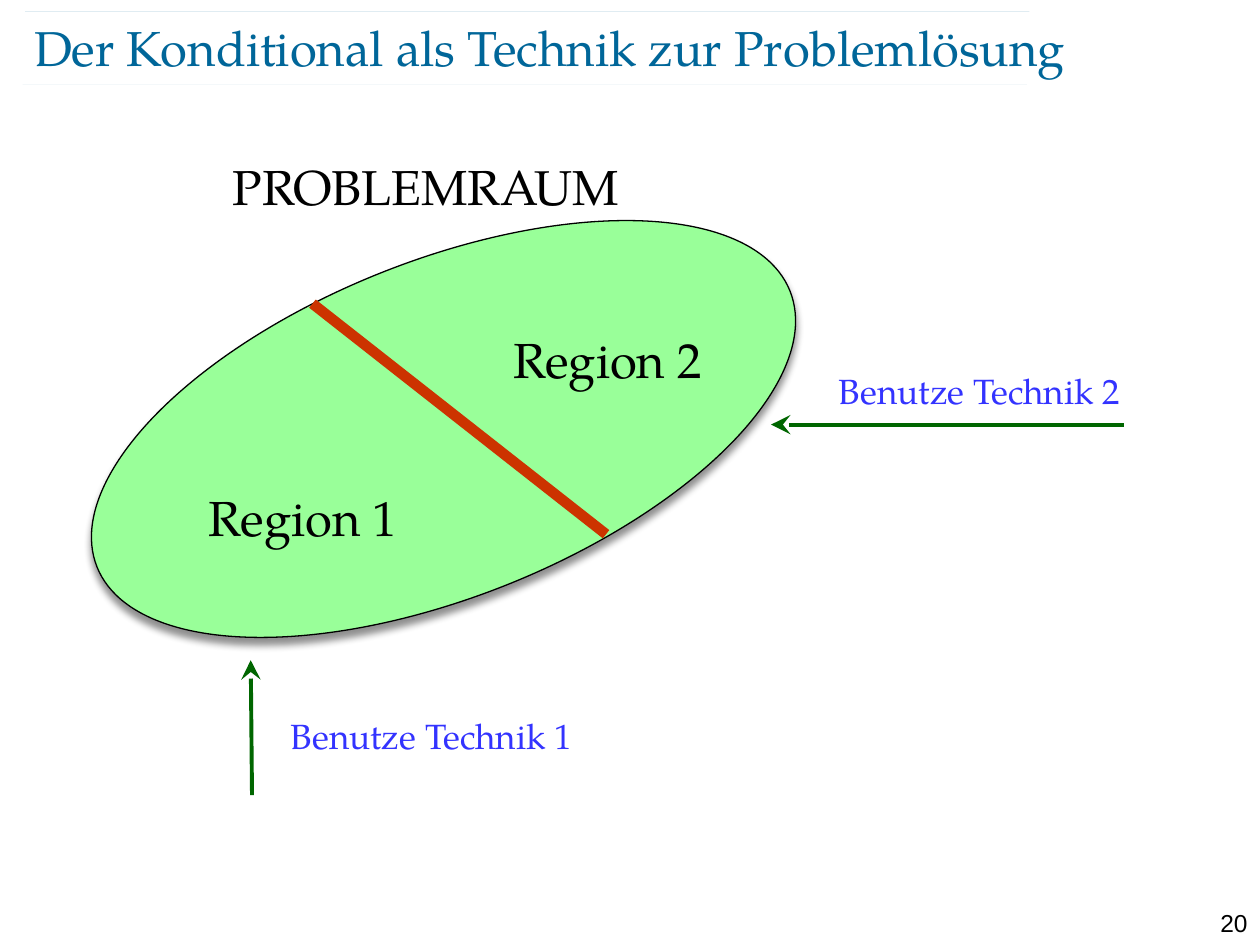
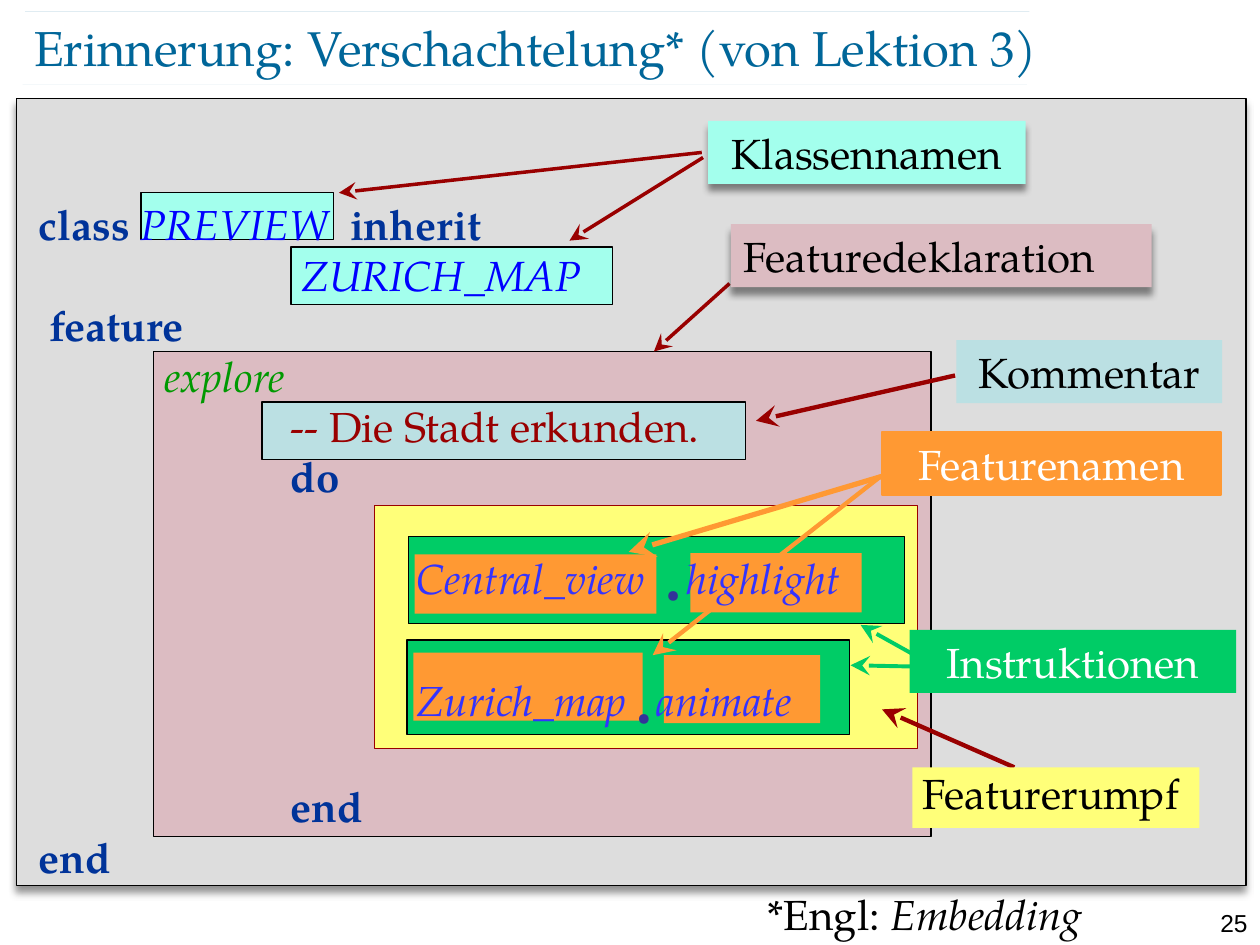
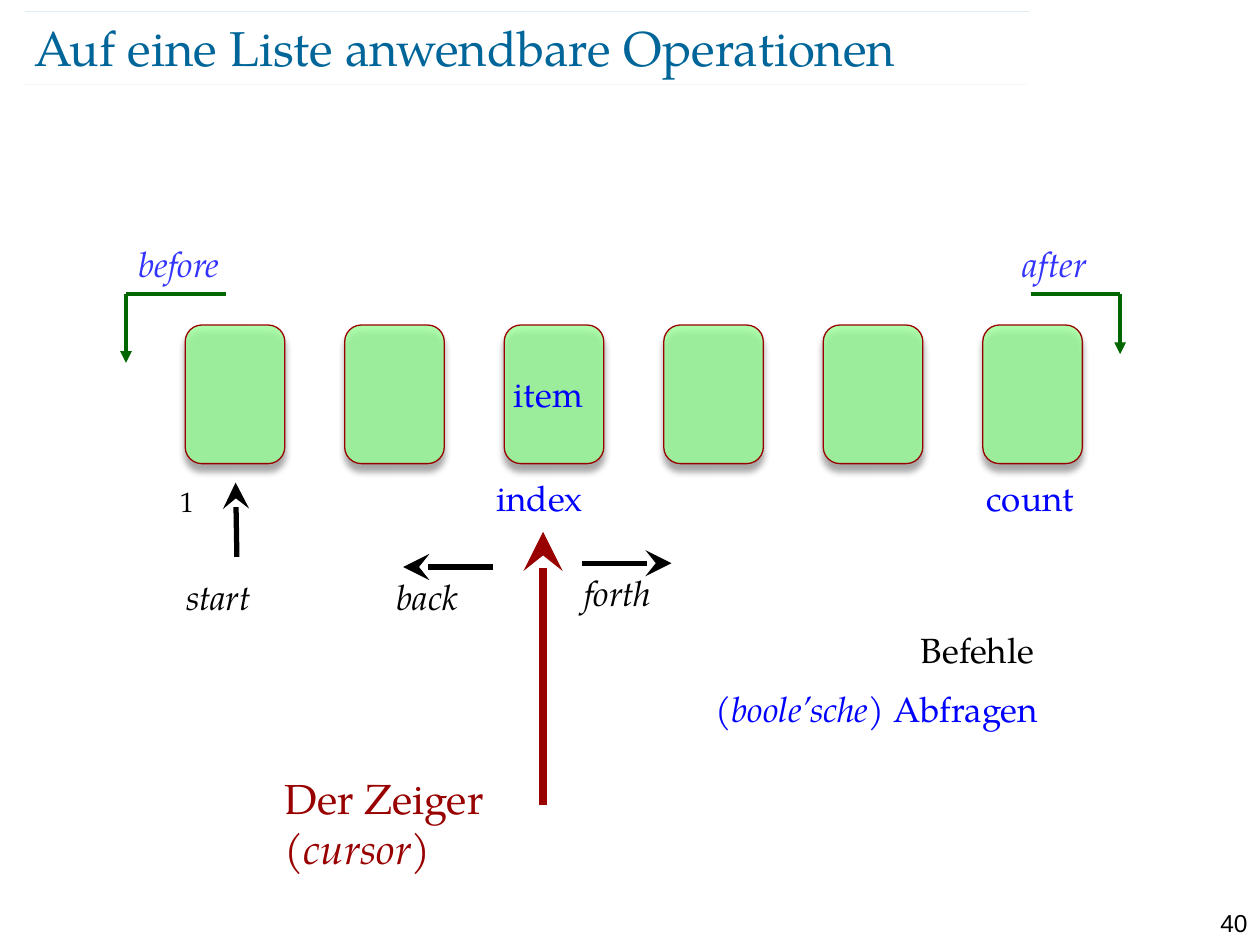
from dataclasses import dataclass

from pptx import Presentation
from pptx.dml.color import RGBColor
from pptx.enum.shapes import MSO_CONNECTOR, MSO_SHAPE
from pptx.enum.text import MSO_ANCHOR, PP_ALIGN
from pptx.oxml.ns import qn
from pptx.oxml.xmlchemy import OxmlElement
from pptx.util import Inches, Pt


@dataclass(frozen=True)
class Theme:
    """Colours, fonts and type sizes shared by the slides."""
    font: str = "TeX Gyre Pagella"
    number_font: str = "Arial"
    heading: int = 28
    body: int = 24
    label: int = 20
    small: int = 16
    number: int = 14
    black: str = "000000"
    white: str = "FFFFFF"
    title: str = "006699"
    mint: str = "99FF99"
    divider: str = "CC3300"
    arrow: str = "006600"
    violet: str = "3333FF"
    blue: str = "0000FF"
    red: str = "990000"
    keyword: str = "003399"
    dot: str = "333399"
    feature: str = "009900"
    grey: str = "DDDDDD"
    pink: str = "DCBCC2"
    aqua: str = "A3FFED"
    ice: str = "BBE0E3"
    yellow: str = "FFFF79"
    green: str = "00CC66"
    orange: str = "FF9933"


THEME = Theme()


@dataclass(frozen=True)
class Box:
    """A rectangle in inches that positions the parts inside it."""
    left: float
    top: float
    width: float
    height: float

    def inside(self, left, top, width, height):
        """Return a box offset from this one."""
        return Box(self.left + left, self.top + top, width, height)

    def lengths(self):
        """Return the four lengths for python-pptx."""
        return [Inches(v) for v in (self.left, self.top, self.width, self.height)]


def add_element(parent, tag, **attributes):
    """Append an XML element with attributes and return it."""
    element = OxmlElement(tag)
    for name, value in attributes.items():
        element.set(name, str(value))
    parent.append(element)
    return element


def set_opacity(parent, percent):
    """Make the first colour below parent partly transparent."""
    colour = next(parent.iter(qn("a:srgbClr")))
    add_element(colour, "a:alpha", val=percent * 1000)


def style_run(run, size, colour, style="", font=THEME.font):
    """Format one run; style holds b for bold and i for italic."""
    run.font.name = font
    run.font.size = Pt(size)
    run.font.bold = "b" in style
    run.font.italic = "i" in style
    run.font.color.rgb = RGBColor.from_string(colour)


def write_runs(paragraph, runs, size):
    """Fill a paragraph with (text, colour, style) runs; v lowers the text."""
    for text, colour, style in runs:
        run = paragraph.add_run()
        run.text = text
        style_run(run, size, colour, style)
        if "v" in style:
            run.font._element.set("baseline", "-20000")


def write_text(text_frame, text, size, colour, style="", font=THEME.font, align=PP_ALIGN.LEFT):
    """Fill a text frame with one uniformly formatted paragraph."""
    text_frame.word_wrap = True
    text_frame.text = text
    paragraph = text_frame.paragraphs[0]
    paragraph.alignment = align
    style_run(paragraph.runs[0], size, colour, style, font)
    return paragraph


def set_margins(text_frame, left=0, top=0, right=0, bottom=0):
    """Set the inner margins of a text frame in inches."""
    text_frame.margin_left, text_frame.margin_top = Inches(left), Inches(top)
    text_frame.margin_right, text_frame.margin_bottom = Inches(right), Inches(bottom)


def add_frame(slide, box):
    """Add a wrapping text box and return its text frame."""
    text_frame = slide.shapes.add_textbox(*box.lengths()).text_frame
    text_frame.word_wrap = True
    return text_frame


def add_panel(slide, box, fill, line=None, shadow=False, kind=MSO_SHAPE.RECTANGLE):
    """Add a filled shape with an optional thin outline and shadow."""
    shape = slide.shapes.add_shape(kind, *box.lengths())
    shape.shadow.inherit = False
    shape.fill.solid()
    shape.fill.fore_color.rgb = RGBColor.from_string(fill)
    if line:
        shape.line.color.rgb = RGBColor.from_string(line)
        shape.line.width = Pt(0.75)
    else:
        shape.line.fill.background()
    if shadow:
        effects = shape._element.spPr.find(qn("a:effectLst"))
        outer = add_element(effects, "a:outerShdw", blurRad=Pt(4), dist=Pt(4),
                            dir=5400000, algn="ctr", rotWithShape=0)
        add_element(outer, "a:srgbClr", val=THEME.black)
        set_opacity(outer, 43)
    return shape


def add_line(slide, box, start, end, colour, width, head=None):
    """Draw a line between two points of a box, with an optional arrowhead."""
    points = [Inches(value) for x, y in (start, end) for value in (box.left + x, box.top + y)]
    connector = slide.shapes.add_connector(MSO_CONNECTOR.STRAIGHT, *points)
    connector.line.color.rgb = RGBColor.from_string(colour)
    connector.line.width = Pt(width)
    if head:
        size = "lg" if head == "stealth" else "med"
        add_element(connector.line._get_or_add_ln(), "a:tailEnd", type=head, w=size, len=size)
    add_element(connector._element.spPr, "a:effectLst")
    return connector


def add_page(presentation, title, number):
    """Add a slide with the shared rules, title and page number."""
    slide = presentation.slides.add_slide(presentation.slide_layouts[6])
    header = Box(0.18, 0.09, 7.99, 0.58)
    for left, top in ((0, 0.58), (0.02, 0)):
        rule = add_line(slide, header, (left, top), (left + 7.97, top), THEME.title, 0.1)
        set_opacity(rule.line._get_or_add_ln(), 35)
    text_frame = add_frame(slide, header.inside(0.09, 0.04, 8.69, 0.48))
    set_margins(text_frame)
    text_frame.vertical_anchor = MSO_ANCHOR.MIDDLE
    write_text(text_frame, title, THEME.heading, THEME.title)
    write_text(add_frame(slide, Box(9.45, 7.16, 0.55, 0.24)), str(number),
               THEME.number, THEME.black, font=THEME.number_font, align=PP_ALIGN.RIGHT)
    return slide


def draw_problem_space(slide, box):
    """Draw the divided ellipse with its heading and regions."""
    ellipse = add_panel(slide, box.inside(0, 0.88, 5.92, 2.67), THEME.mint, THEME.black,
                        True, MSO_SHAPE.OVAL)
    ellipse.rotation = 338.3
    add_line(slide, box, (1.92, 1.22), (4.25, 3.05), THEME.divider, 6)
    for text, left, top, width in (("Region 1", 1, 2.63, 1.88),
                                   ("Region 2", 3.42, 1.38, 1.86),
                                   ("PROBLEMRAUM", 1.19, 0, 3.4)):
        write_text(add_frame(slide, box.inside(left, top, width, 0.57)), text,
                   THEME.heading, THEME.black)


def draw_technique(slide, box, text, start, end):
    """Draw a technique label and its arrow."""
    write_text(add_frame(slide, box), text, THEME.label, THEME.violet)
    add_line(slide, box, start, end, THEME.arrow, 2.25, "stealth")


def draw_code_panels(slide, box):
    """Draw the nested blocks behind the code."""
    add_panel(slide, box, THEME.grey, THEME.black, True)
    for left, top, width, height, fill, line in (
            (1.09, 2.01, 6.17, 3.85, THEME.pink, THEME.black),
            (0.99, 0.75, 1.53, 0.37, THEME.aqua, THEME.black),
            (2.18, 1.18, 2.55, 0.46, THEME.aqua, THEME.black),
            (1.95, 2.41, 3.84, 0.46, THEME.ice, THEME.black),
            (2.84, 3.23, 4.31, 1.93, THEME.yellow, THEME.red),
            (3.1, 4.3, 3.51, 0.75, THEME.green, THEME.black),
            (3.11, 3.48, 3.94, 0.69, THEME.green, THEME.black),
            (5.14, 4.42, 1.24, 0.54, THEME.orange, None),
            (3.15, 4.4, 1.82, 0.54, THEME.orange, None),
            (5.35, 3.61, 1.36, 0.47, THEME.orange, None),
            (3.16, 3.62, 1.92, 0.47, THEME.orange, None)):
        add_panel(slide, box.inside(left, top, width, height), fill, line)


def draw_callouts(slide, box):
    """Draw the arrows to the code blocks and the callouts naming them."""
    for start, end, colour, width in (
            ((5.66, 1.47), (5.06, 2.01), THEME.red, 2),
            ((5.45, 0.47), (4.39, 1.13), THEME.red, 2),
            ((5.44, 0.43), (2.56, 0.75), THEME.red, 2),
            ((7.45, 2.2), (5.87, 2.56), THEME.red, 2.5),
            ((7.92, 5.31), (6.87, 4.85), THEME.red, 2.5),
            ((7.13, 4.42), (6.7, 4.18), THEME.green, 2.25),
            ((7.11, 4.51), (6.62, 4.5), THEME.green, 2.25),
            ((7.14, 2.92), (4.86, 3.6), THEME.orange, 3),
            ((6.86, 3), (5.05, 4.42), THEME.orange, 2.5)):
        add_line(slide, box, start, end, colour, width, "stealth")
    left, centre = PP_ALIGN.LEFT, PP_ALIGN.CENTER
    callouts = {}
    for text, x, y, width, height, fill, line, shadow, colour, align in (
            ("Featuredeklaration", 5.67, 1, 3.34, 0.5, THEME.pink, None, True, THEME.black, left),
            ("Klassennamen", 5.49, 0.18, 2.52, 0.5, THEME.aqua, None, True, THEME.black, centre),
            ("Kommentar", 7.46, 1.92, 2.11, 0.5, THEME.ice, None, False, THEME.black, centre),
            ("Featurerumpf", 7.11, 5.31, 2.28, 0.48, THEME.yellow, None, False, THEME.black, left),
            ("Featurenamen", 6.87, 2.65, 2.69, 0.5, THEME.orange, THEME.orange, False,
             THEME.white, centre),
            ("Instruktionen", 7.09, 4.22, 2.59, 0.5, THEME.green, None, False,
             THEME.white, centre)):
        shape = add_panel(slide, box.inside(x, y, width, height), fill, line, shadow)
        shape.text_frame.vertical_anchor = MSO_ANCHOR.TOP
        write_text(shape.text_frame, text, THEME.body, colour, align=align)
        callouts[text] = shape
    set_margins(callouts["Featurerumpf"].text_frame, left=0.08, bottom=0.08)


def write_code(slide, box):
    """Write the class listing with its tab stops and line gaps."""
    indents = (1, 2, 3)
    keyword, name = THEME.keyword, THEME.violet
    lines = (
        ([("class ", keyword, "b"), ("PREVIEW\t", THEME.blue, "i"), ("inherit", keyword, "b")],
         (2.47,), 1.5, 0),
        ([("\t\t ZURICH_MAP", THEME.blue, "i")], indents, 1, 0),
        ([(" feature", keyword, "b")], indents, 1, 0),
        ([("\texplore", THEME.feature, "i")], indents, 1, 0),
        ([("\t\t-- Die Stadt erkunden.", THEME.red, "")], indents, 1, 0),
        ([("\t\tdo", keyword, "b")], indents, 1, 0),
        ([("\t\t\tCentral_view\t", name, "i"), ("• ", THEME.dot, "v"), ("highlight", name, "i")],
         indents + (4.98,), 1, 29),
        ([("\t\t\tZurich_map ", name, "i"), ("• ", THEME.dot, "v"), ("animate", name, "i")],
         indents, 1.3, 29),
        ([("\t\tend", keyword, "b")], indents, 1, 29),
        ([("end", keyword, "b")], indents, 1, 0))
    text_frame = add_frame(slide, box)
    for index, (runs, stops, spacing, gap) in enumerate(lines):
        paragraph = text_frame.add_paragraph() if index else text_frame.paragraphs[0]
        tab_list = add_element(paragraph._p.get_or_add_pPr(), "a:tabLst")
        for stop in stops:
            add_element(tab_list, "a:tab", pos=Inches(stop), algn="l")
        paragraph.line_spacing = spacing
        paragraph.space_before = Pt(gap)
        write_runs(paragraph, runs, THEME.body)


def write_footnote(slide, box):
    """Write the translation note."""
    text_frame = add_frame(slide, box)
    set_margins(text_frame)
    write_runs(text_frame.paragraphs[0],
               [("*Engl: ", THEME.black, ""), ("Embedding", THEME.black, "i")], THEME.body)


def draw_list_cells(slide, box, count=6, cell_width=0.79):
    """Spread equal list cells across the box."""
    pitch = (box.width - cell_width) / (count - 1)
    for index in range(count):
        cell = add_panel(slide, box.inside(index * pitch, 0, cell_width, box.height),
                         THEME.mint, THEME.red, True, MSO_SHAPE.ROUNDED_RECTANGLE)
        set_opacity(cell._element.spPr.find(qn("a:solidFill")), 79)


def draw_list_operations(slide, box):
    """Draw the arrows and names of the operations around the cells."""
    for start, corner, end in (((0.79, 0.39), (0, 0.39), (0, 0.94)),
                               ((7.18, 0.39), (7.89, 0.39), (7.89, 0.87))):
        add_line(slide, box, start, corner, THEME.arrow, 2.25)
        add_line(slide, box, corner, end, THEME.arrow, 2.25, "triangle")
    for start, end, colour, width in (((3.31, 4.45), (3.31, 2.28), THEME.red, 4.5),
                                      ((3.62, 2.53), (4.33, 2.53), THEME.black, 3),
                                      ((2.91, 2.56), (2.2, 2.56), THEME.black, 3),
                                      ((0.88, 2.48), (0.87, 1.89), THEME.black, 3)):
        add_line(slide, box, start, end, colour, width, "stealth")
    for text, left, top, colour, style in (("item", 2.98, 1.03, THEME.blue, ""),
                                           ("before", 0, 0, THEME.violet, "i"),
                                           ("after", 7.02, 0, THEME.violet, "i"),
                                           ("count", 6.73, 1.86, THEME.blue, ""),
                                           ("forth", 3.54, 2.61, THEME.black, "i"),
                                           ("back", 2.05, 2.64, THEME.black, "i"),
                                           ("index", 2.84, 1.86, THEME.blue, ""),
                                           ("start", 0.38, 2.64, THEME.black, "i")):
        paragraph = write_text(add_frame(slide, box.inside(left, top, 1.18, 0.37)), text,
                               THEME.label, colour, style)
        paragraph.line_spacing = 0.8
    write_text(add_frame(slide, box.inside(0.33, 1.86, 0.5, 0.37)), "1",
               THEME.small, THEME.black)


def write_legend(slide, box):
    """Write the legend for commands and queries."""
    commands = add_frame(slide, box.inside(1.63, 0, 1.92, 0.37))
    write_text(commands, "Befehle", THEME.label, THEME.black).line_spacing = 0.8
    queries = add_frame(slide, box.inside(0, 0.47, 3.18, 0.38)).paragraphs[0]
    queries.line_spacing = 0.8
    write_runs(queries, [("(", THEME.blue, ""), ("boole’sche", THEME.blue, "i"),
                         (") Abfragen", THEME.blue, "")], THEME.label)


def write_cursor_caption(slide, box):
    """Write the caption of the cursor arrow."""
    write_runs(add_frame(slide, box).paragraphs[0],
               [("Der Zeiger (", THEME.red, ""), ("cursor", THEME.red, "i"),
                (")", THEME.red, "")], THEME.body)


def build_conditional_slide(presentation):
    """Build the slide on the conditional."""
    slide = add_page(presentation, "Der Konditional als Technik zur Problemlösung", 20)
    draw_problem_space(slide, Box(0.56, 1.19, 5.92, 3.55))
    draw_technique(slide, Box(2.21, 5.62, 2.92, 0.43), "Benutze Technik 1",
                   (-0.21, 0.69), (-0.22, -0.38))
    draw_technique(slide, Box(6.56, 2.88, 2.67, 0.44), "Benutze Technik 2",
                   (2.36, 0.49), (-0.44, 0.49))


def build_nesting_slide(presentation):
    """Build the slide on nested code."""
    slide = add_page(presentation, "Erinnerung: Verschachtelung* (von Lektion 3)", 25)
    listing = Box(0.13, 0.78, 9.76, 6.25)
    draw_code_panels(slide, listing)
    draw_callouts(slide, listing)
    write_code(slide, listing.inside(0.08, 0.55, 7.5, 5.67))
    write_footnote(slide, Box(6.09, 7.05, 3.06, 0.4))


def build_list_slide(presentation):
    """Build the slide on list operations."""
    slide = add_page(presentation, "Auf eine Liste anwendbare Operationen", 40)
    draw_list_cells(slide, Box(1.47, 2.58, 7.12, 1.1))
    draw_list_operations(slide, Box(1, 1.94, 8.04, 4.45))
    write_legend(slide, Box(5.58, 5, 3.55, 0.85))
    write_cursor_caption(slide, Box(2.16, 6.08, 2.22, 0.91))


def main():
    """Build and save the presentation."""
    presentation = Presentation()
    presentation.slide_width, presentation.slide_height = Inches(10), Inches(7.5)
    build_conditional_slide(presentation)
    build_nesting_slide(presentation)
    build_list_slide(presentation)
    presentation.save("out.pptx")


if __name__ == "__main__":
    main()
